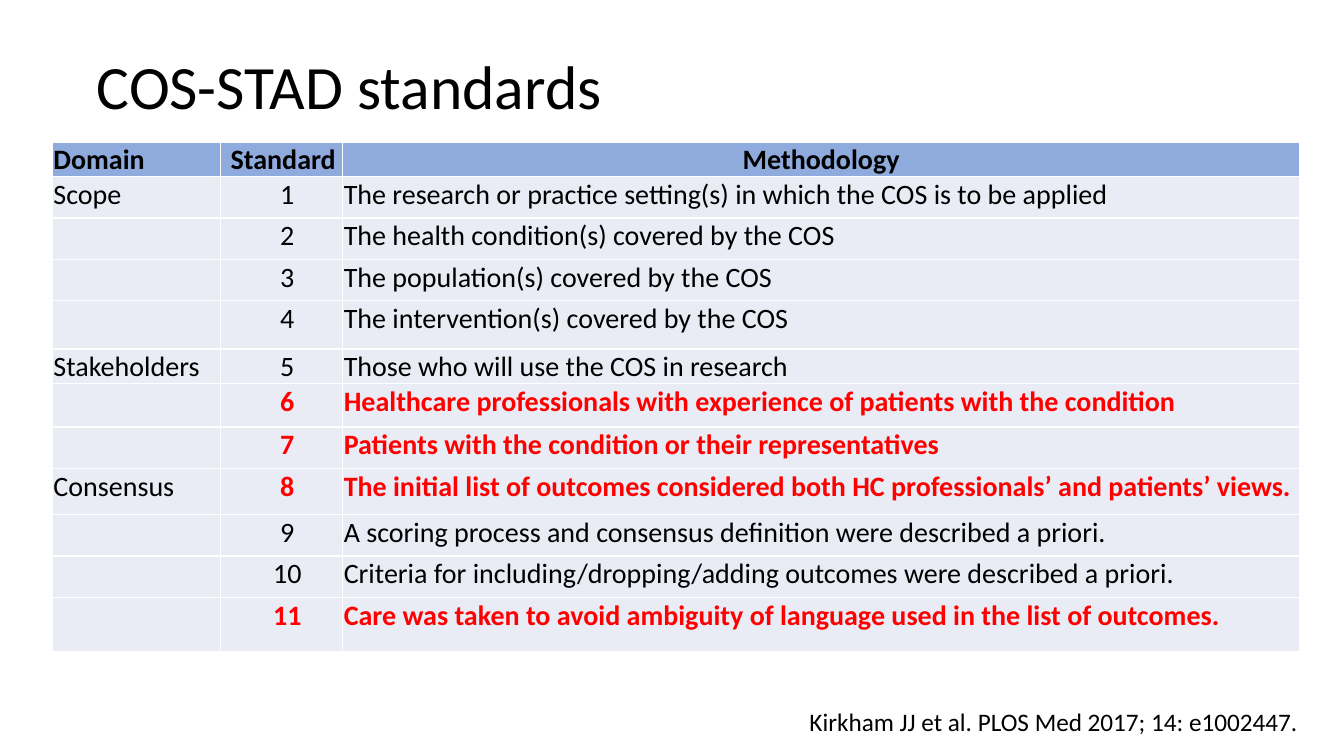
"""Build a slide with the table of COS-STAD standards."""
from dataclasses import dataclass

from lxml import etree
from pptx import Presentation
from pptx import util as u
from pptx.dml import color
from pptx.enum import text
from pptx.oxml import ns


@dataclass(frozen=True)
class Theme:
    font: str = "Calibri"
    ink: str = "000000"
    key: str = "FF0000"
    head: str = "8FAADC"
    band: str = "E9EBF5"
    rule: str = "FFFFFF"
    title: int = 44
    body: int = 20
    cite: int = 18


THEME = Theme()
LEFT, MID = text.PP_ALIGN.LEFT, text.PP_ALIGN.CENTER
COLS = (1.67, 1.21, 9.49)
HEADS = ("Domain", "Standard", "Methodology")
ROWS = (
    ("Scope", "The research or practice setting(s) in which the COS is to be applied", 0.41),
    ("", "The health condition(s) covered by the COS", 0.41),
    ("", "The population(s) covered by the COS", 0.41),
    ("", "The intervention(s) covered by the COS", 0.48),
    ("Stakeholders", "Those who will use the COS in research", 0.34),
    ("", "Healthcare professionals with experience of patients with the condition", 0.43),
    ("", "Patients with the condition or their representatives", 0.41),
    ("Consensus", "The initial list of outcomes considered both HC professionals’ and patients’ views.", 0.46),
    ("", "A scoring process and consensus definition were described a priori.", 0.41),
    ("", "Criteria for including/dropping/adding outcomes were described a priori.", 0.41),
    ("", "Care was taken to avoid ambiguity of language used in the list of outcomes.", 0.54),
)
KEYS = {6, 7, 8, 11}


def write(frame, words, size=THEME.body, ink=THEME.ink, bold=False, align=LEFT, space=None):
    """Put one formatted paragraph in a text frame and return it."""
    para = frame.paragraphs[0]
    para.text = words
    para.alignment = align
    para.line_spacing = space
    font = para.font
    font.name, font.size, font.bold = THEME.font, u.Pt(size), bold
    font.color.rgb = color.RGBColor.from_string(ink)
    return para


def edge(cell):
    """Draw thin rules on all four sides of a cell."""
    props = cell._tc.get_or_add_tcPr()
    for side in ("lnL", "lnR", "lnT", "lnB"):
        line = etree.SubElement(props, ns.qn(f"a:{side}"), w=str(u.Pt(1)))
        fill = etree.SubElement(line, ns.qn("a:solidFill"))
        etree.SubElement(fill, ns.qn("a:srgbClr"), val=THEME.rule)


def fill_cell(cell, words, fill, inset=0.01, **style):
    """Set the rules, fill, margins and text of a cell."""
    edge(cell)
    cell.fill.solid()
    cell.fill.fore_color.rgb = color.RGBColor.from_string(fill)
    cell.margin_left = u.Inches(inset)
    cell.margin_top = cell.margin_right = u.Inches(0.01)
    cell.margin_bottom = 0
    write(cell.text_frame, words, **style)


def add_title(slide, box):
    """Place the slide title in its box."""
    title = slide.shapes.title
    title.left, title.top, title.width, title.height = map(u.Inches, box)
    title.text_frame.vertical_anchor = text.MSO_ANCHOR.MIDDLE
    write(title.text_frame, "COS-STAD standards", size=THEME.title, space=0.9)


def add_grid(slide, box):
    """Place the table of standards in its box."""
    frame = slide.shapes.add_table(len(ROWS) + 1, len(COLS), *map(u.Inches, box))
    table = frame.table
    for col, width in zip(table.columns, COLS):
        col.width = u.Inches(width)
    table.rows[0].height = u.Inches(0.34)
    for col, (head, inset, align) in enumerate(zip(HEADS, (0.01, 0.04, 0.01), (LEFT, MID, MID))):
        fill_cell(table.cell(0, col), head, THEME.head, inset, bold=True, align=align)
    for num, (group, method, height) in enumerate(ROWS, 1):
        table.rows[num].height = u.Inches(height)
        bold = num in KEYS
        ink = THEME.key if bold else THEME.ink
        fill_cell(table.cell(num, 0), group, THEME.band)
        fill_cell(table.cell(num, 1), str(num), THEME.band, 0.12, ink=ink, bold=bold, align=MID)
        fill_cell(table.cell(num, 2), method, THEME.band, ink=ink, bold=bold)


def add_cite(slide, box):
    """Place the reference with a hanging indent in its box."""
    frame = slide.shapes.add_textbox(*map(u.Inches, box)).text_frame
    frame.word_wrap = True
    para = write(frame, "Kirkham JJ et al. PLOS Med 2017; 14: e1002447.", size=THEME.cite)
    props = para._p.get_or_add_pPr()
    props.set("marL", str(u.Inches(0.44)))
    props.set("indent", str(-u.Inches(0.44)))


def main():
    """Build and save the slide."""
    deck = Presentation()
    deck.slide_width, deck.slide_height = u.Inches(13.33), u.Inches(7.5)
    slide = deck.slides.add_slide(deck.slide_layouts[5])
    add_cite(slide, (7.93, 6.96, 5.19, 0.4))
    add_grid(slide, (0.52, 1.41, 12.37, 5.05))
    add_title(slide, (0.86, 0.16, 11.5, 1.45))
    deck.save("out.pptx")


if __name__ == "__main__":
    main()
